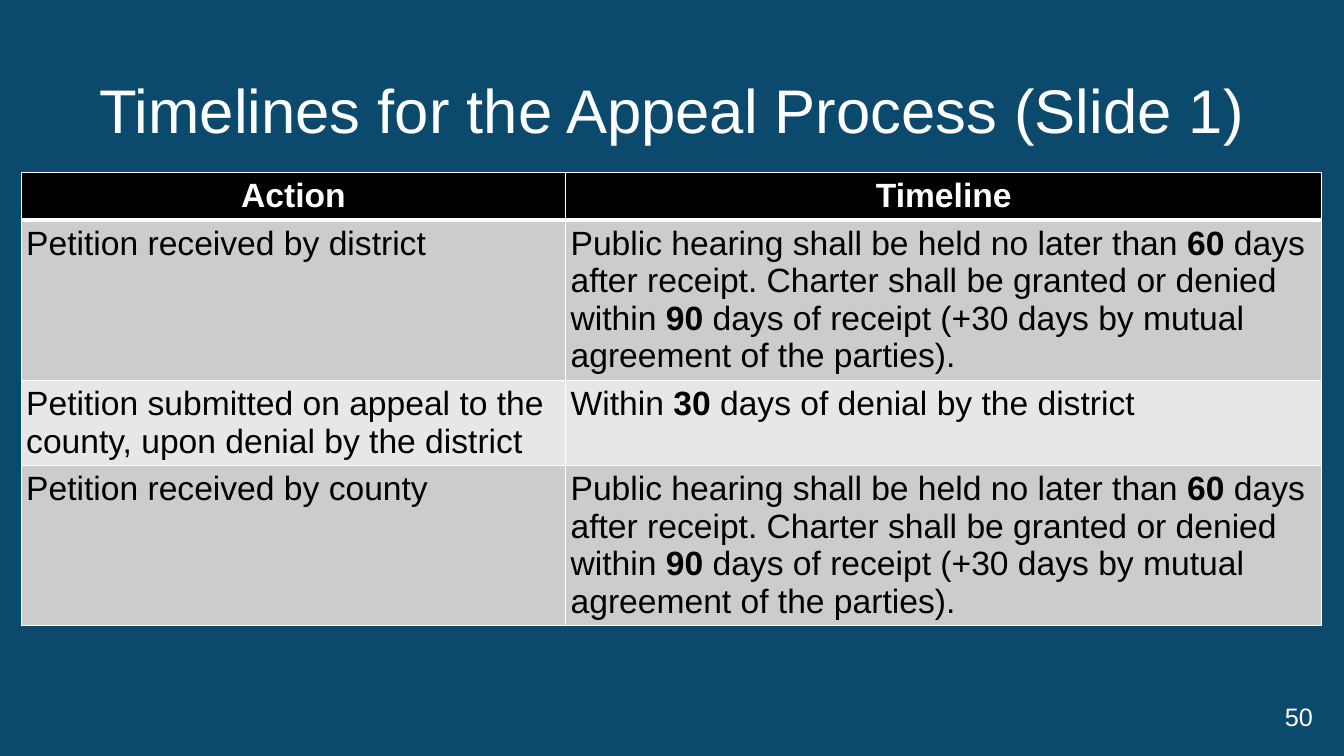
from lxml import etree
from pptx import Presentation
from pptx.dml.color import RGBColor
from pptx.enum.text import MSO_ANCHOR, PP_ALIGN
from pptx.oxml.ns import qn
from pptx.util import Inches, Pt

LEFT, CENTER, RIGHT = PP_ALIGN.LEFT, PP_ALIGN.CENTER, PP_ALIGN.RIGHT
TOP, MIDDLE = MSO_ANCHOR.TOP, MSO_ANCHOR.MIDDLE

NAVY = RGBColor(0x0C, 0x4A, 0x6D)
WHITE = RGBColor(0xFF, 0xFF, 0xFF)
BLACK = RGBColor(0x00, 0x00, 0x00)
GRAY = RGBColor(0xCC, 0xCC, 0xCC)
PALE = RGBColor(0xE7, 0xE7, 0xE7)

HEARING = [
    "Public hearing shall be held no later than ", "60",
    " days after receipt. Charter shall be granted or denied within ", "90",
    " days of receipt (+30 days by mutual agreement of the parties).",
]
TIMELINES = [
    (["Petition received by district"], HEARING),
    (["Petition submitted on appeal to the county, upon denial by the district"],
     ["Within ", "30", " days of denial by the district"]),
    (["Petition received by county"], HEARING),
]


class SlideBuilder:
    font = "Arial"
    table_size = 24
    cell_margin = Inches(0.05)
    grid_step = 0.1

    def __init__(self, deck):
        self.slide = deck.slides.add_slide(deck.slide_layouts[5])
        fill = self.slide.background.fill
        fill.solid()
        fill.fore_color.rgb = NAVY

    def grid(self, *steps):
        return [Inches(step * self.grid_step) for step in steps]

    def fill_text(self, frame, parts, size, color, align, bold=False):
        para = frame.paragraphs[0]
        para.alignment = align
        for index, part in enumerate(parts):
            span = para.add_run()
            span.text = part
            span.font.name = self.font
            span.font.size = Pt(size)
            span.font.color.rgb = color
            span.font.bold = bold or index % 2 == 1
        return para

    def title(self, text, area):
        box = self.slide.shapes.title
        box.left, box.top, box.width, box.height = self.grid(*area)
        box.text_frame.vertical_anchor = MIDDLE
        para = self.fill_text(box.text_frame, [text], 44, WHITE, CENTER)
        para.line_spacing = 0.9

    def page_number(self, text, area):
        box = self.slide.shapes.add_textbox(*self.grid(*area))
        box.text_frame.word_wrap = True
        box.text_frame.vertical_anchor = MIDDLE
        self.fill_text(box.text_frame, [text], 18, WHITE, RIGHT)

    def borders(self, cell, bottom):
        properties = cell._tc.get_or_add_tcPr()
        for side, width in (("L", 1), ("R", 1), ("T", 1), ("B", bottom)):
            line = etree.SubElement(properties, qn(f"a:ln{side}"), w=str(Pt(width)))
            fill = etree.SubElement(line, qn("a:solidFill"))
            etree.SubElement(fill, qn("a:srgbClr"), val=str(WHITE))

    def cell(self, cell, parts, fill, header=False):
        self.borders(cell, 3 if header else 1)
        cell.fill.solid()
        cell.fill.fore_color.rgb = fill
        cell.margin_left = cell.margin_right = self.cell_margin
        cell.margin_top = cell.margin_bottom = self.cell_margin
        cell.vertical_anchor = MIDDLE if header else TOP
        self.fill_text(cell.text_frame, parts, self.table_size,
                       WHITE if header else BLACK, CENTER if header else LEFT, header)

    def table(self, headings, rows, corner, widths, heights):
        area = self.grid(*corner, sum(widths), sum(heights))
        table = self.slide.shapes.add_table(len(heights), len(widths), *area).table
        table.horz_banding = False
        for column, width in zip(table.columns, self.grid(*widths)):
            column.width = width
        for row, height in zip(table.rows, self.grid(*heights)):
            row.height = height
        for index, heading in enumerate(headings):
            self.cell(table.cell(0, index), [heading], BLACK, header=True)
        for row_index, row in enumerate(rows, start=1):
            fill = GRAY if row_index % 2 else PALE
            for index, parts in enumerate(row):
                self.cell(table.cell(row_index, index), parts, fill)


def main():
    deck = Presentation()
    deck.slide_width, deck.slide_height = Inches(13.33), Inches(7.5)
    builder = SlideBuilder(deck)
    builder.title("Timelines for the Appeal Process (Slide 1)", (2.2, 4, 129, 14.5))
    builder.table(["Action", "Timeline"], TIMELINES, (2.1, 17.1), (54, 75),
                  (4.7, 15.9, 8.4, 15.9))
    builder.page_number("50", (125.6, 69.1, 5.6, 4))
    deck.save("out.pptx")


if __name__ == "__main__":
    main()
